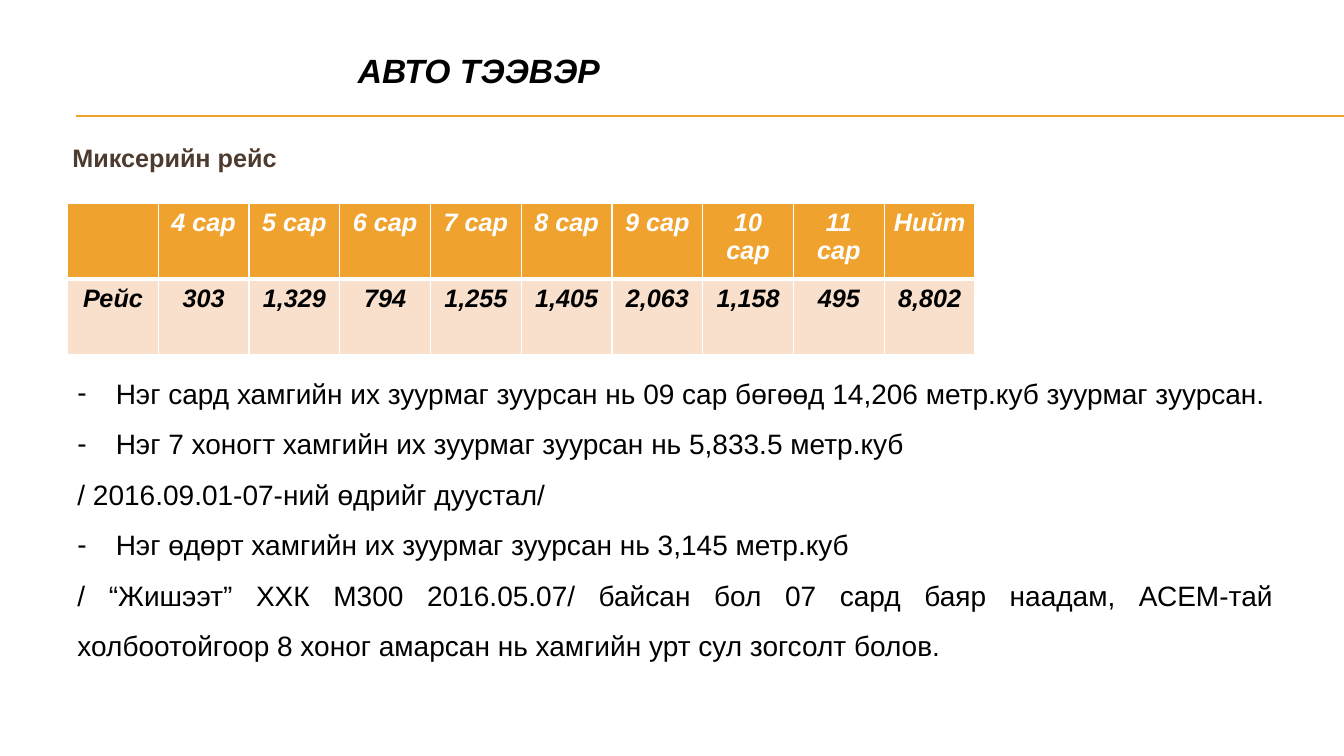
import lxml.etree
import pptx
import pptx.dml.color
import pptx.enum.shapes
import pptx.enum.text
import pptx.oxml.ns
import pptx.util

PX = 9144  # EMU per px, 100 px to the inch
WHITE = pptx.dml.color.RGBColor(0xFF, 0xFF, 0xFF)
BLACK = pptx.dml.color.RGBColor(0x00, 0x00, 0x00)
AMBER = pptx.dml.color.RGBColor(0xF0, 0xA2, 0x2E)
PEACH = pptx.dml.color.RGBColor(0xF9, 0xE0, 0xCD)
BROWN = pptx.dml.color.RGBColor(0x4E, 0x3B, 0x30)
ALIGN = pptx.enum.text.PP_ALIGN
ANCHOR = pptx.enum.text.MSO_ANCHOR

TRIPS = [
    ("", "Рейс"), ("4 сар", "303"), ("5 сар", "1,329"), ("6 сар", "794"),
    ("7 сар", "1,255"), ("8 сар", "1,405"), ("9 сар", "2,063"),
    ("10 сар", "1,158"), ("11 сар", "495"), ("Нийт", "8,802"),
]
# Each remark: text, bulleted
REMARKS = [
    ("Нэг сард хамгийн их зуурмаг зуурсан нь 09 сар бөгөөд 14,206 метр.куб зуурмаг зуурсан.", True),
    ("Нэг 7 хоногт хамгийн их зуурмаг зуурсан нь 5,833.5 метр.куб", True),
    ("/ 2016.09.01-07-ний өдрийг дуустал/", False),
    ("Нэг өдөрт хамгийн их зуурмаг зуурсан нь 3,145 метр.куб", True),
    ("/ “Жишээт” ХХК М300 2016.05.07/ байсан бол 07 сард баяр наадам, АСЕМ-тай "
     "холбоотойгоор 8 хоног амарсан нь хамгийн урт сул зогсолт болов.", False),
]


def add_child(parent, tag, **attributes):
    return lxml.etree.SubElement(parent, pptx.oxml.ns.qn(tag), attributes)


class SlideBuilder:
    font = "Arial"
    cell_margin = 8  # narrow enough to keep each word on one line

    def __init__(self, slide):
        self.slide = slide

    def style(self, paragraph, size, color, align, bold=False, italic=False):
        paragraph.alignment = align
        for run in paragraph.runs:
            run.font.name = self.font
            run.font.size = pptx.util.Pt(size)
            run.font.bold = bold
            run.font.italic = italic
            run.font.color.rgb = color

    def text(self, box, content, size, color, align=ALIGN.LEFT, anchor=ANCHOR.TOP, **weight):
        frame = self.slide.shapes.add_textbox(*(v * PX for v in box)).text_frame
        frame.word_wrap = True
        frame.vertical_anchor = anchor
        frame.text = content
        for paragraph in frame.paragraphs:
            self.style(paragraph, size, color, align, **weight)
        return frame

    def bullet(self, paragraph, indent):
        properties = paragraph._p.get_or_add_pPr()
        properties.set("marL", str(indent * PX))
        properties.set("indent", str(-indent * PX))
        add_child(properties, "a:buFont", typeface=self.font)
        add_child(properties, "a:buChar", char="-")

    def rule(self, left, right, y):
        line = self.slide.shapes.add_connector(
            pptx.enum.shapes.MSO_CONNECTOR.STRAIGHT, left * PX, y * PX, right * PX, y * PX)
        line.line.color.rgb = AMBER
        line.line.width = pptx.util.Pt(0.75)
        add_child(line._element.spPr, "a:effectLst")

    def borders(self, cell, **widths):
        properties = cell._tc.get_or_add_tcPr()
        for side in "LRTB":
            width = pptx.util.Pt(widths.get(side, 1))
            border = add_child(properties, f"a:ln{side}", w=str(width))
            add_child(add_child(border, "a:solidFill"), "a:srgbClr", val=str(WHITE))

    def table(self, left, top, column_width, row_height, columns):
        table = self.slide.shapes.add_table(
            2, len(columns), left * PX, top * PX,
            column_width * len(columns) * PX, row_height * 2 * PX).table
        # Row style: fill, text colour, thick border between header and body
        rows = [(AMBER, WHITE, {"B": 3}), (PEACH, BLACK, {"T": 3})]
        for c, column in enumerate(columns):
            for r, (fill, color, thick) in enumerate(rows):
                cell = table.cell(r, c)
                cell.text = column[r]
                cell.margin_left = cell.margin_right = self.cell_margin * PX
                self.style(cell.text_frame.paragraphs[0], 18, color, ALIGN.CENTER, True, True)
                self.borders(cell, **thick)
                cell.fill.solid()
                cell.fill.fore_color.rgb = fill


def main():
    deck = pptx.Presentation()
    deck.slide_width, deck.slide_height = 1333 * PX, 750 * PX
    page = SlideBuilder(deck.slides.add_slide(deck.slide_layouts[6]))

    # Double rule under the title
    for y in (115, 116):
        page.rule(75, 1333, y)

    # Trips per month
    page.table(67, 202, 90, 75, TRIPS)

    # Title and subtitle
    page.text((55, 45, 840, 50), "АВТО ТЭЭВЭР", 24, BLACK, ALIGN.CENTER, ANCHOR.MIDDLE,
              bold=True, italic=True)
    subtitle = page.text((62, 136, 626, 70), "Миксерийн рейс", 18, BROWN, bold=True)
    subtitle.paragraphs[0].space_before = pptx.util.Pt(3.6)

    # Remarks
    remarks = page.text((67, 352, 1206, 390), "\n".join(text for text, _ in REMARKS),
                        20, BLACK, ALIGN.JUSTIFY)
    for paragraph, (_, bulleted) in zip(remarks.paragraphs, REMARKS):
        paragraph.line_spacing = 1.5
        if bulleted:
            page.bullet(paragraph, 38)

    deck.save("out.pptx")


if __name__ == "__main__":
    main()
